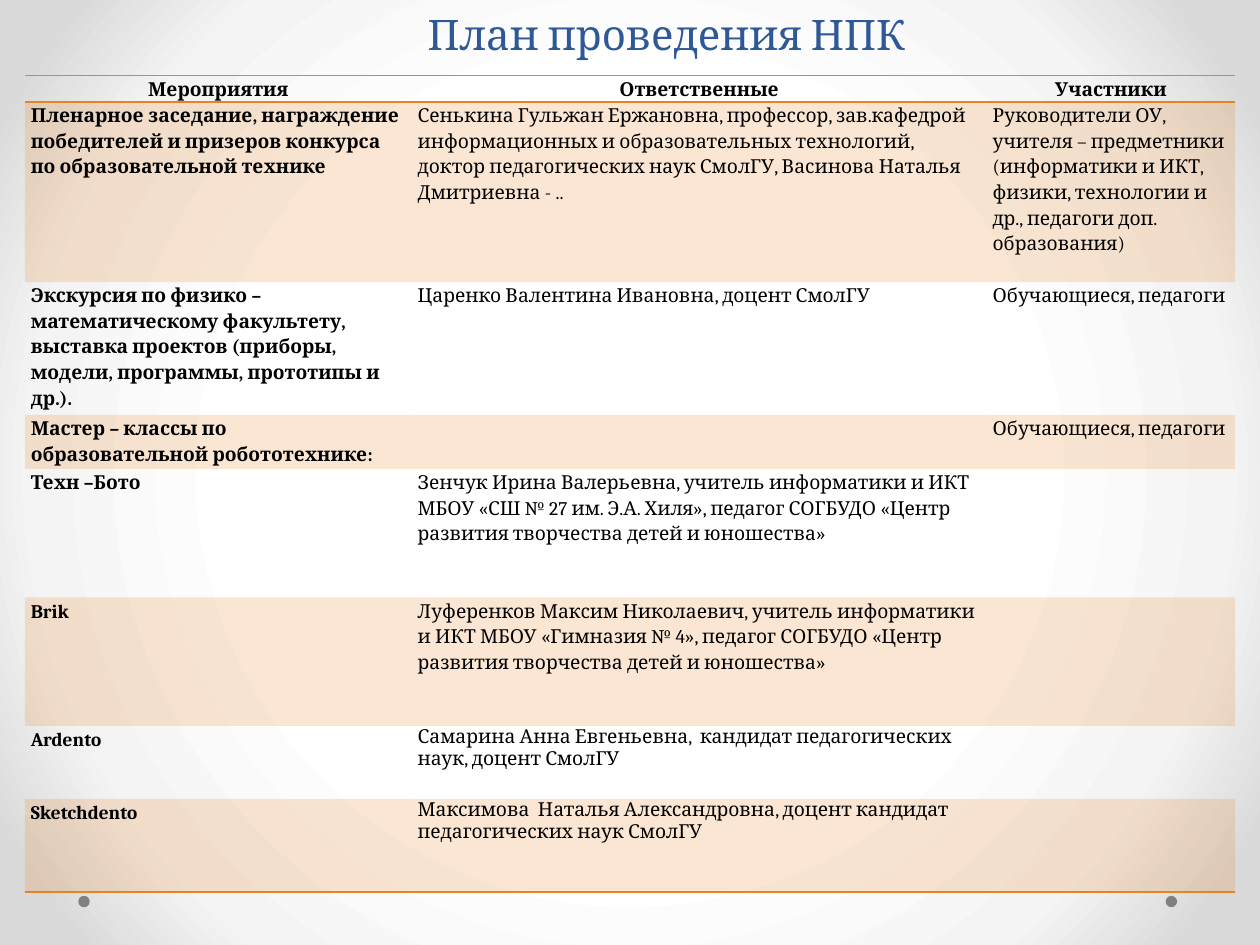
from pptx import Presentation
from pptx.dml.color import RGBColor
from pptx.enum.shapes import MSO_SHAPE as Preset
from pptx.enum.text import MSO_ANCHOR as Anchor, PP_ALIGN as Align
from pptx.oxml import parse_xml
from pptx.oxml.ns import nsdecls, qn
from pptx.util import Cm, Pt

FONT = "Cambria"
COLORS = {
    "title": "2F5897",
    "text": "000000",
    "accent": "E68422",
    "dot": "808080",
}
BACKGROUND_STOPS = [(50, "FFFFFF"), (76, "F4F4F4"), (92, "DADADA")]
NO_STYLE = "{2D5ABB26-0587-4C30-8999-92F81FD0307C}"

COLUMN_WIDTHS = [7.8, 11.59, 5.01]
ROW_HEIGHTS = [0.53, 3.63, 2.67, 1.09, 2.59, 2.59, 1.47, 1.88]
SINGLE_SPACED = {(6, 1), (7, 1)}
PLAN = [
    ("Мероприятия", "Ответственные", "Участники"),
    ("Пленарное заседание, награждение победителей и призеров конкурса "
     "по образовательной технике",
     "Сенькина Гульжан Ержановна, профессор, зав.кафедрой информационных "
     "и образовательных технологий,  доктор педагогических наук СмолГУ, "
     "Васинова Наталья Дмитриевна - ..",
     "Руководители ОУ, учителя – предметники (информатики и ИКТ, физики, "
     "технологии и др., педагоги доп. образования)"),
    ("Экскурсия по физико – математическому факультету, выставка проектов "
     "(приборы, модели, программы, прототипы и др.).",
     "Царенко Валентина Ивановна, доцент СмолГУ",
     "Обучающиеся, педагоги"),
    ("Мастер – классы по образовательной робототехнике:", "",
     "Обучающиеся, педагоги"),
    ("Техн –Бото",
     "Зенчук Ирина Валерьевна, учитель информатики и ИКТ МБОУ «СШ № 27 "
     "им. Э.А. Хиля», педагог СОГБУДО «Центр развития творчества детей "
     "и юношества»", ""),
    ("Brik",
     "Луференков Максим Николаевич, учитель информатики и ИКТ МБОУ "
     "«Гимназия № 4», педагог СОГБУДО «Центр развития творчества детей "
     "и юношества»", ""),
    ("Ardento",
     "Самарина Анна Евгеньевна,  кандидат педагогических наук, "
     "доцент СмолГУ", ""),
    ("Sketchdento",
     "Максимова  Наталья Александровна, доцент кандидат педагогических "
     "наук СмолГУ", ""),
]


def color(name):
    return RGBColor.from_string(COLORS[name])


def format_font(font, size, color_name, bold=False):
    font.name = FONT
    font.size = Pt(size)
    font.bold = bold
    font.color.rgb = color(color_name)


def set_background(slide):
    """Radial gradient, light in the middle."""
    slide.background.fill.gradient()
    gradient = slide.element.find(".//" + qn("a:gradFill"))
    stops = "".join(
        f'<a:gs pos="{position * 1000}"><a:srgbClr val="{value}"/></a:gs>'
        for position, value in BACKGROUND_STOPS)
    radial = parse_xml(
        f'<a:gradFill {nsdecls("a")} rotWithShape="1"><a:gsLst>{stops}</a:gsLst>'
        '<a:path path="circle"><a:fillToRect l="50000" t="50000" '
        'r="50000" b="50000"/></a:path></a:gradFill>')
    gradient.getparent().replace(gradient, radial)


def add_dot(slide, left):
    dot = slide.shapes.add_shape(
        Preset.OVAL, Cm(left), Cm(18.06), Cm(0.23), Cm(0.23))
    dot.shadow.inherit = False
    dot.fill.solid()
    dot.fill.fore_color.rgb = color("dot")
    dot.line.fill.background()


def add_title(slide, text):
    title = slide.shapes.add_textbox(Cm(2.31), 0, Cm(22.45), Cm(1.27))
    frame = title.text_frame
    frame.word_wrap = True
    frame.vertical_anchor = Anchor.BOTTOM
    frame.margin_top = 0
    frame.margin_bottom = Cm(0.08)
    frame.text = text
    paragraph = frame.paragraphs[0]
    paragraph.alignment = Align.CENTER
    format_font(paragraph.runs[0].font, 24, "title")


def fill_cell(cell, banded):
    if not banded:
        cell.fill.background()
        return
    cell.fill.solid()
    cell.fill.fore_color.rgb = color("accent")
    tint = cell.fill._xPr.find(".//" + qn("a:srgbClr"))
    tint.append(parse_xml(f'<a:alpha {nsdecls("a")} val="20000"/>'))


def add_borders(cell, sides):
    properties = cell._tc.get_or_add_tcPr()
    for index, side in enumerate(sides):
        properties.insert(index, parse_xml(
            f'<a:ln{side} {nsdecls("a")} w="12700"><a:solidFill>'
            f'<a:srgbClr val="{COLORS["accent"]}"/></a:solidFill></a:ln{side}>'))


def write_cell(cell, text, header, bold, spacing):
    cell.margin_left = cell.margin_right = Cm(0.12)
    cell.margin_top = cell.margin_bottom = 0
    cell.text_frame.text = text
    paragraph = cell.text_frame.paragraphs[0]
    paragraph.line_spacing = spacing
    paragraph.alignment = Align.CENTER if header else Align.LEFT
    for run in paragraph.runs:
        format_font(run.font, 11, "text", bold)


def add_plan_table(slide):
    frame = slide.shapes.add_table(
        len(PLAN), len(COLUMN_WIDTHS), Cm(0.5), Cm(1.52),
        Cm(sum(COLUMN_WIDTHS)), Cm(sum(ROW_HEIGHTS)))
    table = frame.table
    table.first_row = table.horz_banding = False
    table._tbl.tblPr.find(qn("a:tableStyleId")).text = NO_STYLE
    for column, width in zip(table.columns, COLUMN_WIDTHS):
        column.width = Cm(width)
    for row, height in zip(table.rows, ROW_HEIGHTS):
        row.height = Cm(height)

    borders = {0: "TB", len(PLAN) - 1: "B"}
    for r, texts in enumerate(PLAN):
        for c, text in enumerate(texts):
            cell = table.cell(r, c)
            spacing = 1.0 if (r, c) in SINGLE_SPACED else 1.15
            write_cell(cell, text, r == 0, r == 0 or c == 0, spacing)
            fill_cell(cell, r % 2 == 1)
            add_borders(cell, borders.get(r, ""))


def main():
    presentation = Presentation()
    presentation.slide_width = Cm(25.4)
    presentation.slide_height = Cm(19.05)
    slide = presentation.slides.add_slide(presentation.slide_layouts[6])

    # Backdrop
    set_background(slide)
    for left in (23.5, 1.58):
        add_dot(slide, left)

    # Content
    add_title(slide, "План проведения НПК ")
    add_plan_table(slide)

    presentation.save("out.pptx")


if __name__ == "__main__":
    main()
